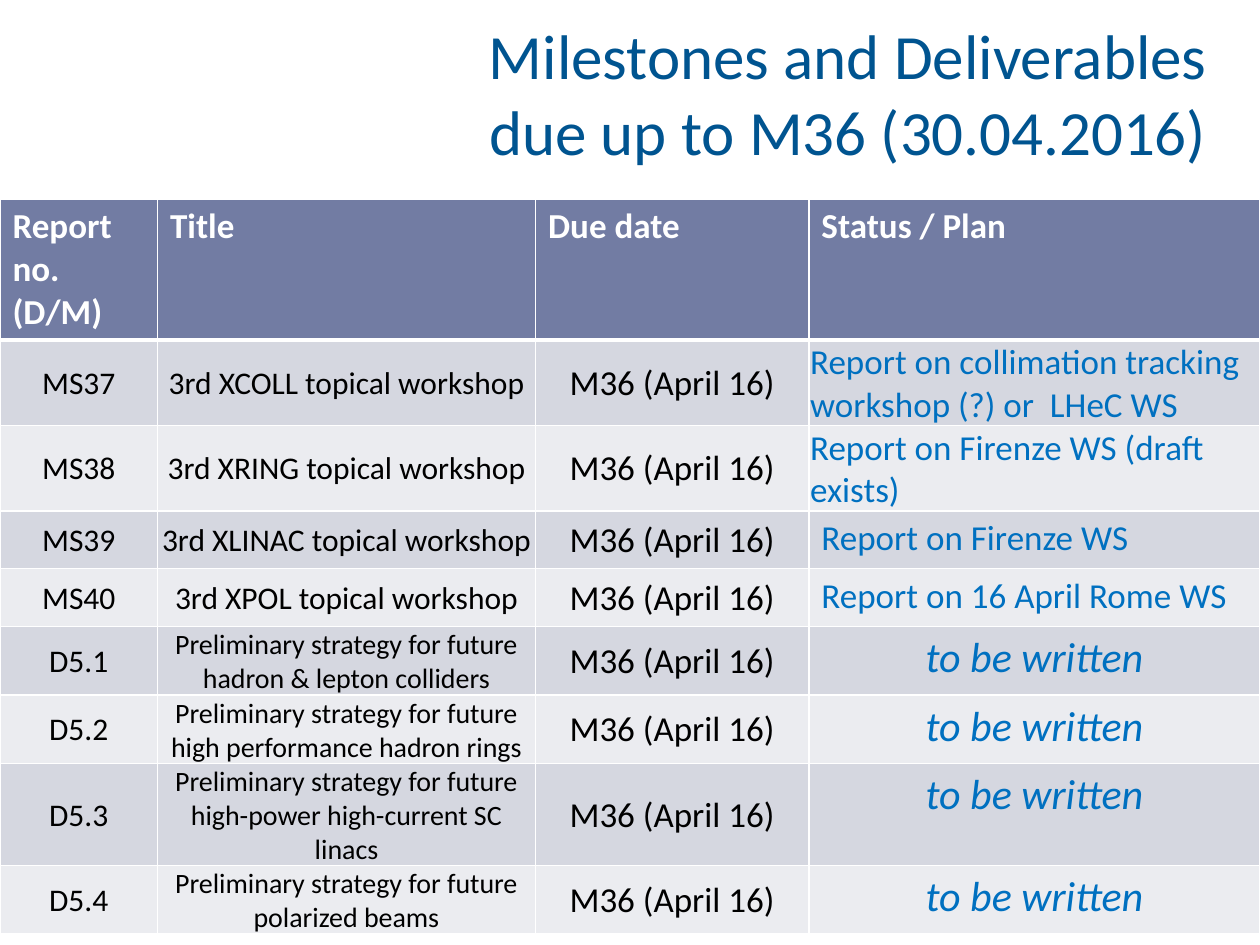
from dataclasses import dataclass

from lxml.etree import SubElement
from pptx import Presentation
from pptx.dml.color import RGBColor as RGB
from pptx.enum.text import MSO_ANCHOR as Anchor, PP_ALIGN as Align
from pptx.oxml.ns import qn
from pptx.util import Inches, Pt


@dataclass(frozen=True)
class Theme:
    font: str = "Calibri"
    title: str = "005490"
    header: str = "727CA3"
    bands: tuple = ("D5D7E0", "EBECF0")
    white: str = "FFFFFF"
    black: str = "000000"
    status: str = "0070C0"
    title_size: int = 36
    written_size: int = 24
    large: int = 20
    medium: int = 18
    small: int = 16


@dataclass(frozen=True)
class Report:
    number: str
    title: str
    status: str = "to be written"
    inset: bool = False

    @property
    def is_deliverable(self) -> bool:
        return self.number.startswith("D")


THEME = Theme()
DUE = "M36 (April 16)"
HEADERS = ("Report no. (D/M)", "Title", "Due date", "Status / Plan")
COLUMN_WIDTHS = (1.25, 3, 2.17, 3.58)
HEADER_HEIGHT, ROW_HEIGHT = 1.12, 0.46
STRATEGY = "Preliminary strategy for future "
REPORTS = (
    Report("MS37", "3rd XCOLL topical workshop",
           "Report on collimation tracking  workshop (?) or  LHeC WS", True),
    Report("MS38", "3rd XRING topical workshop",
           "Report on Firenze WS (draft exists)", True),
    Report("MS39", "3rd XLINAC topical workshop", "Report on Firenze WS"),
    Report("MS40", "3rd XPOL topical workshop", "Report on 16 April Rome WS"),
    Report("D5.1", STRATEGY + "hadron & lepton colliders"),
    Report("D5.2", STRATEGY + "high performance hadron rings"),
    Report("D5.3", STRATEGY + "high-power high-current SC linacs"),
    Report("D5.4", STRATEGY + "polarized beams"),
)


def write(tf, text: str, *, size: int, color: str, align=Align.LEFT,
          bold: bool = False, italic: bool = False) -> None:
    tf.word_wrap = True
    p = tf.paragraphs[0]
    p.alignment = align
    r = p.add_run()
    r.text = text
    font = r.font
    font.name, font.size = THEME.font, Pt(size)
    font.bold, font.italic = bold, italic
    font.color.rgb = RGB.from_string(color)


def style_cell(cell, fill: str, top: int = 1, bottom: int = 1) -> None:
    tc_pr = cell._tc.get_or_add_tcPr()
    for side, width in (("L", 1), ("R", 1), ("T", top), ("B", bottom)):
        ln = SubElement(tc_pr, qn(f"a:ln{side}"), w=str(Pt(width)))
        solid = SubElement(ln, qn("a:solidFill"))
        SubElement(solid, qn("a:srgbClr"), val=THEME.white)
    cell.fill.solid()
    cell.fill.fore_color.rgb = RGB.from_string(fill)


def tighten(cell) -> None:
    cell.vertical_anchor = Anchor.MIDDLE
    cell.margin_left = cell.margin_top = cell.margin_right = Inches(0.01)
    cell.margin_bottom = 0


def fill_report(cells, report: Report, band: str, top: int) -> None:
    for cell in cells:
        style_cell(cell, band, top=top)
    number, title, due, status = cells
    title_size = THEME.small if report.is_deliverable else THEME.medium
    for cell, text, size in ((number, report.number, THEME.medium),
                             (title, report.title, title_size),
                             (due, DUE, THEME.large)):
        tighten(cell)
        write(cell.text_frame, text, size=size, color=THEME.black,
              align=Align.CENTER)
    if report.inset:
        tighten(status)
    write(status.text_frame, report.status, color=THEME.status,
          size=THEME.written_size if report.is_deliverable else THEME.large,
          align=Align.CENTER if report.is_deliverable else Align.LEFT,
          italic=report.is_deliverable)


def add_title(s) -> None:
    box = s.shapes.add_textbox(Inches(3.48), Inches(0.17), Inches(6.5), Inches(1.12))
    tf = box.text_frame
    tf.vertical_anchor = Anchor.MIDDLE
    write(tf, "Milestones and Deliverables due up to M36 (30.04.2016)",
          size=THEME.title_size, color=THEME.title, align=Align.CENTER)


def add_report_table(s) -> None:
    height = Inches(5.84)
    frame = s.shapes.add_table(len(REPORTS) + 1, len(HEADERS),
                               0, Inches(1.58), Inches(10), height)
    table = frame.table
    for column, width in zip(table.columns, COLUMN_WIDTHS):
        column.width = Inches(width)
    for i, row in enumerate(table.rows):
        row.height = Inches(ROW_HEIGHT if i else HEADER_HEIGHT)
    frame.height = height

    header, *body = table.rows
    for cell, text in zip(header.cells, HEADERS):
        style_cell(cell, THEME.header, bottom=3)
        write(cell.text_frame, text, size=THEME.large, color=THEME.white, bold=True)
    for i, (row, report) in enumerate(zip(body, REPORTS)):
        fill_report(tuple(row.cells), report, THEME.bands[i % 2], 1 if i else 3)


def main() -> None:
    prs = Presentation()
    prs.slide_width, prs.slide_height = Inches(10), Inches(7.5)
    s = prs.slides.add_slide(prs.slide_layouts[6])
    add_title(s)
    add_report_table(s)
    prs.save("out.pptx")


if __name__ == "__main__":
    main()
